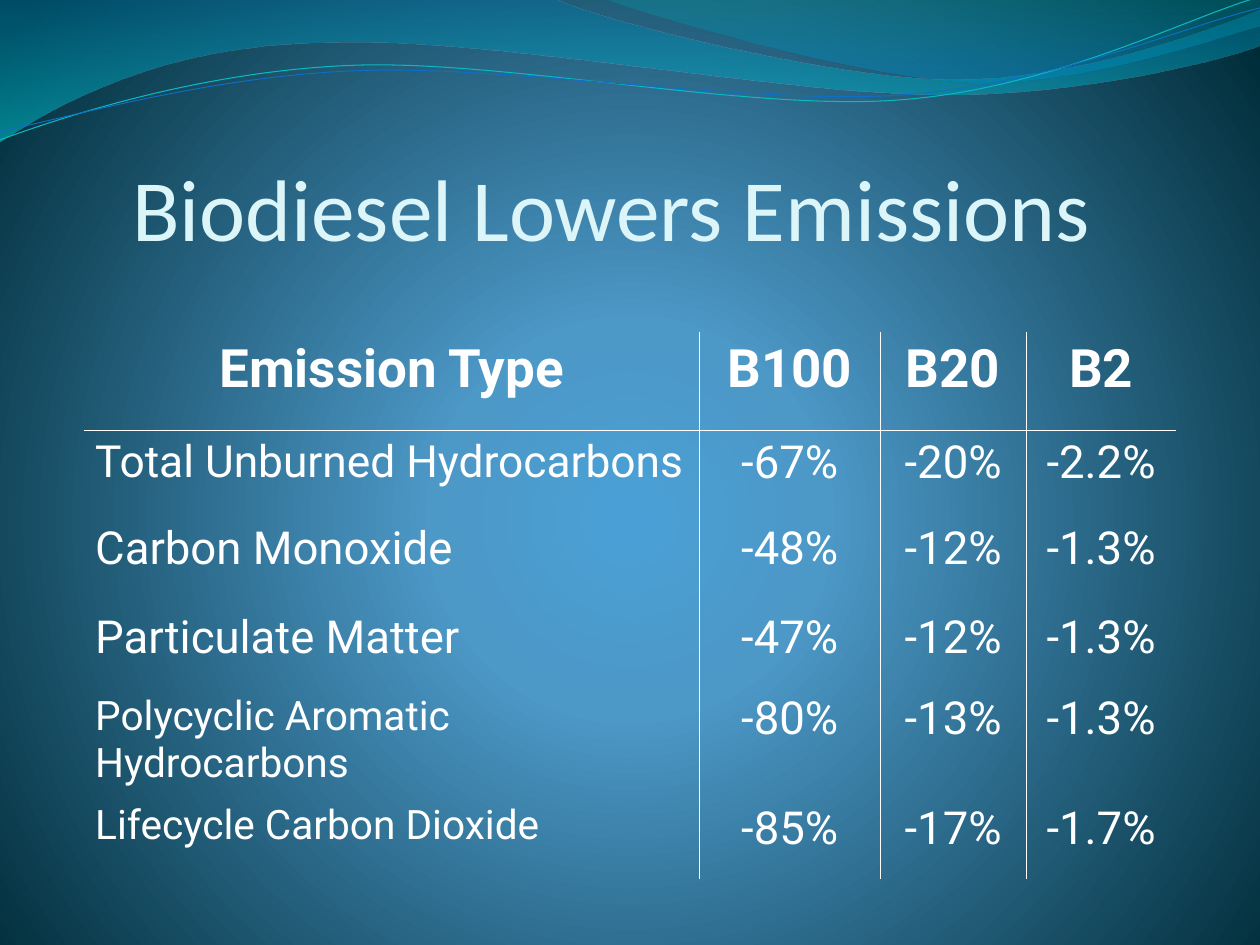
from dataclasses import dataclass

from lxml.etree import SubElement
from pptx import Presentation
from pptx.dml.color import RGBColor
from pptx.enum.text import MSO_ANCHOR as Anchor, PP_ALIGN as Align
from pptx.oxml import parse_xml
from pptx.oxml.ns import nsdecls, qn
from pptx.util import Cm, Pt

COLORS = {
    "text": "FFFFFF", "title": "DBF5F9", "grid": "FFFFFF",
    "glow": "4AA0D6", "middle": "4C98C7", "edge": "002C38",
    "wave_blue": "0074A1", "wave_cyan": "00C6CF",
    "crest_teal": "00A1A9", "crest_blue": "008BBF",
    "line_cyan": "0AB8BF", "line_blue": "0F6FC6",
}
LINE_TILT = -2.7
NO_STYLE = "{2D5ABB26-0587-4C30-8999-92F81FD0307C}"

Point = tuple[float, float]
Segment = tuple[Point, ...]  # one point: straight; three points: Bézier curve


@dataclass
class Stop:
    position: int
    color: str
    opacity: int = 100


@dataclass
class Wave:
    start: Point
    segments: list[Segment]
    stops: tuple[Stop, ...] = ()
    line_color: str = ""
    line_width: float = 0


@dataclass
class EmissionRow:
    height: float
    label: str
    values: tuple[str, str, str]
    label_size: int = 37
    value_size: int = 37
    header: bool = False


WAVES = [
    Wave((0, -0.03), [
        ((15.9, -0.03),),
        ((17.2, 0.61), (23.98, 2.29), (27.41, 2.29)),
        ((30.81, 2.29), (34.62, 0.91), (36.12, 0.3)),
        ((36.17, 1.3),),
        ((35.53, 1.57), (31.42, 2.74), (26.95, 2.72)),
        ((22.45, 2.72), (13.79, 1.02), (9.3, 1.24)),
        ((4.67, 1.27), (1.65, 3), (-0.03, 4.09)),
        ((0, -0.03),),
    ], stops=(Stop(0, "wave_blue", 45), Stop(100, "wave_cyan", 55))),
    Wave((17.3, -0.03), [
        ((18.39, 0.41), (24.64, 2.24), (27.76, 2.36)),
        ((30.91, 2.49), (34.72, 1.14), (36.12, 0.76)),
        ((36.12, 0),),
        ((17.3, -0.03),),
    ], stops=(Stop(0, "crest_teal", 30), Stop(80, "crest_blue", 45))),
    Wave((-0.07, 3.16), [
        ((1.68, 2.61), (5.7, 1.48), (10, 1.5)),
        ((14.3, 1.5), (21.36, 3.36), (25.71, 3.23)),
        ((30.06, 3.13), (33.96, 1.31), (36.12, 0.78)),
    ], line_color="line_cyan", line_width=0.85),
    Wave((-0.06, 2.91), [
        ((1.66, 2.68), (5.93, 1.61), (10.25, 1.66)),
        ((14.57, 1.69), (21.54, 3.19), (25.85, 3.09)),
        ((30.18, 2.98), (34.03, 1.49), (36.19, 1.08)),
    ], line_color="line_blue", line_width=0.75),
]
COLUMN_WIDTHS = [17.65, 5.18, 4.19, 4.29]
ROWS = [
    EmissionRow(2.82, "Emission Type", ("B100", "B20", "B2"), 43, 43, True),
    EmissionRow(2.46, "Total Unburned Hydrocarbons", ("-67%", "-20%", "-2.2%"), 36),
    EmissionRow(2.54, "Carbon Monoxide", ("-48%", "-12%", "-1.3%")),
    EmissionRow(2.34, "Particulate Matter", ("-47%", "-12%", "-1.3%")),
    EmissionRow(3.12, "Polycyclic Aromatic Hydrocarbons", ("-80%", "-13%", "-1.3%"), 33),
    EmissionRow(2.39, "Lifecycle Carbon Dioxide", ("-85%", "-17%", "-1.7%"), 33),
]


def set_gradient(fill, holder, stops: tuple[Stop, ...], direction: str) -> None:
    fill.gradient()
    marks = "".join(
        f'<a:gs pos="{stop.position * 1000}"><a:srgbClr val="{COLORS[stop.color]}">'
        f'<a:alpha val="{stop.opacity * 1000}"/></a:srgbClr></a:gs>' for stop in stops)
    gradient = parse_xml(f'<a:gradFill {nsdecls("a")} rotWithShape="1">'
                         f"<a:gsLst>{marks}</a:gsLst>{direction}</a:gradFill>")
    holder.replace(holder.find(qn("a:gradFill")), gradient)


def bend(shape, segments: list[Segment]) -> None:
    """Join each run of three straight steps into one Bézier curve."""
    steps = iter(list(shape.element.spPr.iter(qn("a:lnTo"))))
    for segment in segments:
        group = [next(steps) for _ in segment]
        if len(group) == 3:
            group[0].tag = qn("a:cubicBezTo")
            for step in group[1:]:
                group[0].append(step[0])
                step.getparent().remove(step)


def draw_wave(slide, wave: Wave) -> None:
    builder = slide.shapes.build_freeform(Cm(wave.start[0]), Cm(wave.start[1]))
    builder.add_line_segments(
        [(Cm(x), Cm(y)) for segment in wave.segments for x, y in segment],
        close=bool(wave.stops))
    shape = builder.convert_to_shape()
    bend(shape, wave.segments)
    shape.shadow.inherit = False
    if wave.stops:
        set_gradient(shape.fill, shape.element.spPr, wave.stops, '<a:lin ang="5400000" scaled="1"/>')
        shape.line.fill.background()
    else:
        shape.rotation = LINE_TILT
        shape.fill.background()
        shape.line.color.rgb = RGBColor.from_string(COLORS[wave.line_color])
        shape.line.width = Pt(wave.line_width)


def write(frame, text: str, size: int, font: str, color: str, align: Align, bold: bool = False) -> None:
    paragraph = frame.paragraphs[0]
    paragraph.text = text
    paragraph.alignment = align
    paragraph.font.size = Pt(size)
    paragraph.font.name = font
    paragraph.font.bold = bold
    paragraph.font.color.rgb = RGBColor.from_string(COLORS[color])


def set_borders(cell, sides: dict[str, bool]) -> None:
    properties = cell._tc.get_or_add_tcPr()
    for side, visible in sides.items():
        line = SubElement(properties, qn(f"a:ln{side}"), w=str(Pt(1)))
        if visible:
            fill = SubElement(line, qn("a:solidFill"))
            SubElement(fill, qn("a:srgbClr"), val=COLORS["grid"])
        else:
            SubElement(line, qn("a:noFill"))


def draw_table(slide) -> None:
    frame = slide.shapes.add_table(
        len(ROWS), len(COLUMN_WIDTHS), Cm(2.4), Cm(9.53),
        Cm(sum(COLUMN_WIDTHS)), Cm(sum(row.height for row in ROWS)))
    table = frame.table
    table.first_row = table.horz_banding = False
    table._tbl.tblPr.find(qn("a:tableStyleId")).text = NO_STYLE
    for column, width in zip(table.columns, COLUMN_WIDTHS):
        column.width = Cm(width)
    last = len(COLUMN_WIDTHS) - 1
    for i, row in enumerate(ROWS):
        table.rows[i].height = Cm(row.height)
        for j, text in enumerate((row.label, *row.values)):
            cell = table.cell(i, j)
            set_borders(cell, {"L": j > 0, "R": j < last, "T": i == 1, "B": i == 0})
            cell.fill.background()
            cell.margin_left = cell.margin_right = Cm(0.33)
            cell.margin_top = cell.margin_bottom = Cm(0.17)
            is_label = j == 0
            write(cell.text_frame, text, row.label_size if is_label else row.value_size,
                  "Roboto", "text", Align.LEFT if is_label and not row.header else Align.CENTER,
                  row.header)


def main() -> None:
    presentation = Presentation()
    presentation.slide_width, presentation.slide_height = Cm(36.12), Cm(27.1)
    slide = presentation.slides.add_slide(presentation.slide_layouts[6])

    # Background glow
    fill = slide.background.fill
    set_gradient(fill, slide.element.cSld.bg.bgPr,
                 (Stop(0, "glow"), Stop(25, "middle"), Stop(100, "edge")),
                 '<a:path path="circle"><a:fillToRect l="10000" t="110000" r="10000" b="100000"/></a:path>')

    # Waves along the top
    for wave in WAVES:
        draw_wave(slide, wave)

    # Title
    title = slide.shapes.add_textbox(Cm(2.39), Cm(3.18), Cm(30.28), Cm(4.24)).text_frame
    title.word_wrap = True
    title.vertical_anchor = Anchor.BOTTOM
    title.margin_left = title.margin_right = title.margin_bottom = 0
    title.margin_top = Cm(0.17)
    write(title, "Biodiesel Lowers Emissions", 71, "Calibri", "title", Align.CENTER)

    # Emissions table
    draw_table(slide)
    presentation.save("out.pptx")


if __name__ == "__main__":
    main()
